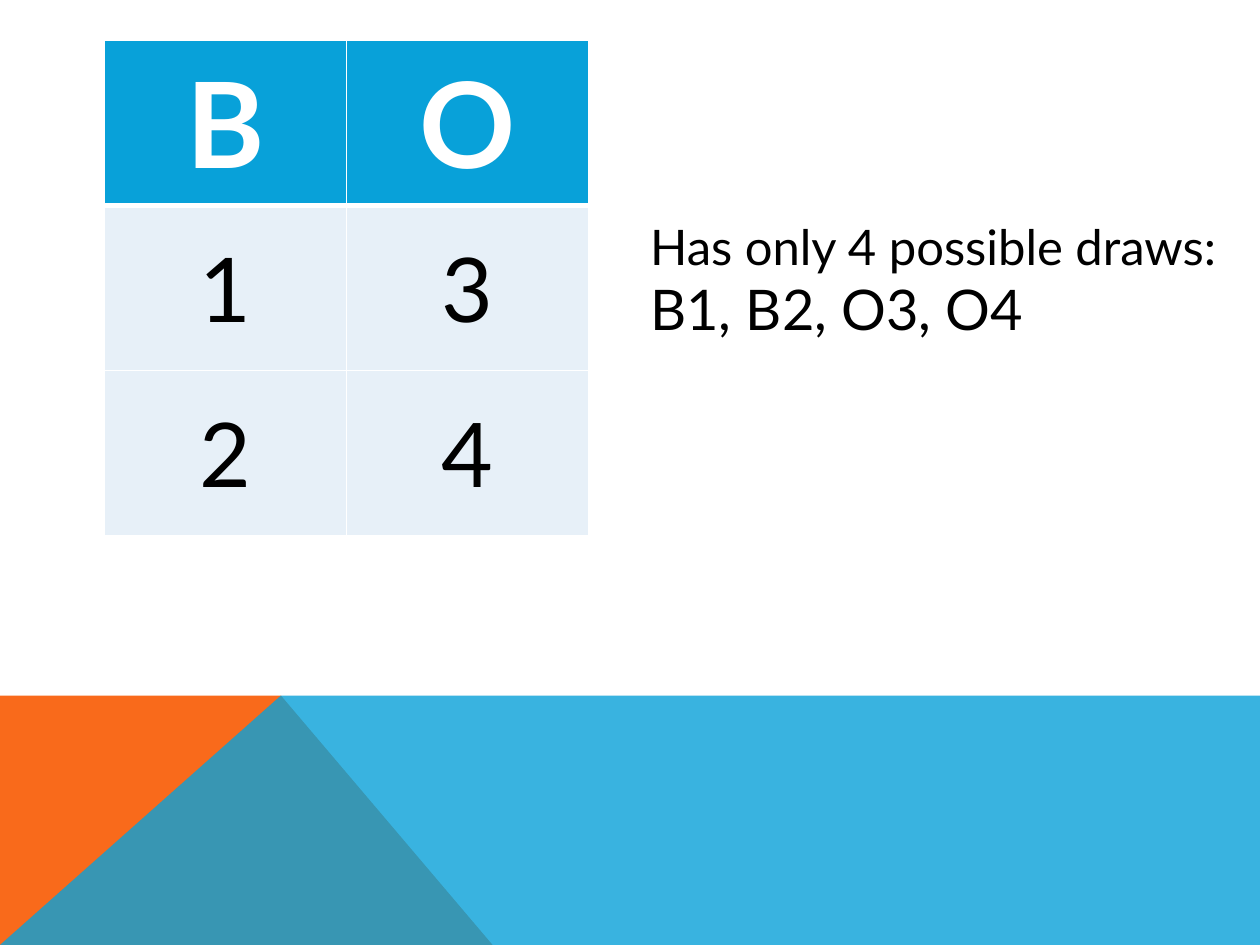
"""Build a slide with a small B/O number table and its possible draws."""
import lxml.etree
import pptx
import pptx.dml.color
import pptx.enum.text
import pptx.oxml.ns
import pptx.util

Inches, Pt = pptx.util.Inches, pptx.util.Pt
RGBColor = pptx.dml.color.RGBColor
qn = pptx.oxml.ns.qn
MIDDLE = pptx.enum.text.MSO_ANCHOR.MIDDLE

WHITE = RGBColor(0xFF, 0xFF, 0xFF)
BLACK = RGBColor(0, 0, 0)
BLUE = RGBColor(0x08, 0xA1, 0xD9)
ORANGE = RGBColor(0xF9, 0x6A, 0x1B)
PALE_BLUE = RGBColor(0xE7, 0xF0, 0xF8)
FONT = "Lato"
INSET = Inches(0.04)

CARD = [["B", "O"], ["1", "3"], ["2", "4"]]
DRAWS = [("Has only 4 possible draws:", 28), ("B1, B2, O3, O4", 32)]
BANDS = [
    ([(0, 7.5), (0, 5.52), (2.23, 5.52), (3.91, 7.5)], ORANGE, 100),
    ([(0, 7.5), (2.23, 5.52), (10, 5.52), (10, 7.5)], BLUE, 80),
]
CARD_LEFT, CARD_TOP, COLUMN_WIDTH, ROW_HEIGHT = 0.83, 0.32, 1.92, 1.31


def add_band(slide, points, color, opacity):
    builder = slide.shapes.build_freeform(
        Inches(points[0][0]), Inches(points[0][1]), scale=1.0)
    builder.add_line_segments([(Inches(x), Inches(y)) for x, y in points[1:]])
    band = builder.convert_to_shape()
    band.shadow.inherit = False
    band.line.fill.background()
    band.fill.solid()
    band.fill.fore_color.rgb = color
    if opacity < 100:
        tint = band.fill._xPr.find(qn("a:solidFill"))[0]
        lxml.etree.SubElement(tint, qn("a:alpha"), val=str(opacity * 1000))


def style_run(run, size, color, bold=False):
    run.font.name = FONT
    run.font.size = Pt(size)
    run.font.color.rgb = color
    run.font.bold = bold


def set_insets(frame):
    frame.margin_left = frame.margin_right = INSET
    frame.margin_top = frame.margin_bottom = INSET


def add_borders(cell, widths):
    properties = cell._tc.get_or_add_tcPr()
    for index, (side, width) in enumerate(widths.items()):
        border = lxml.etree.Element(qn(f"a:ln{side}"), w=str(Pt(width)))
        fill = lxml.etree.SubElement(border, qn("a:solidFill"))
        lxml.etree.SubElement(fill, qn("a:srgbClr"), val=str(WHITE))
        properties.insert(index, border)


def add_card(slide):
    rows, columns = len(CARD), len(CARD[0])
    card = slide.shapes.add_table(
        rows, columns, Inches(CARD_LEFT), Inches(CARD_TOP),
        Inches(columns * COLUMN_WIDTH), Inches(rows * ROW_HEIGHT)).table
    for column in card.columns:
        column.width = Inches(COLUMN_WIDTH)
    for r, values in enumerate(CARD):
        card.rows[r].height = Inches(ROW_HEIGHT)
        header = r == 0
        for c, value in enumerate(values):
            cell = card.cell(r, c)
            cell.text = value
            set_insets(cell)
            cell.vertical_anchor = MIDDLE
            cell.fill.solid()
            cell.fill.fore_color.rgb = BLUE if header else PALE_BLUE
            paragraph = cell.text_frame.paragraphs[0]
            paragraph.alignment = pptx.enum.text.PP_ALIGN.CENTER
            style_run(paragraph.runs[0], 68 if header else 51,
                      WHITE if header else BLACK, header)
            add_borders(cell, {"L": 1, "R": 1, "T": 3 if r == 1 else 1,
                               "B": 3 if header else 1})


def add_draws(slide):
    frame = slide.shapes.add_textbox(
        Inches(5.12), Inches(1.67), Inches(4.73), Inches(1.09)).text_frame
    frame.word_wrap = True
    frame.auto_size = pptx.enum.text.MSO_AUTO_SIZE.SHAPE_TO_FIT_TEXT
    frame.vertical_anchor = MIDDLE
    set_insets(frame)
    frame.text = "\n".join(line for line, size in DRAWS)
    for paragraph, (line, size) in zip(frame.paragraphs, DRAWS):
        style_run(paragraph.runs[0], size, BLACK)


def main():
    deck = pptx.Presentation()
    deck.slide_width, deck.slide_height = Inches(10), Inches(7.5)
    slide = deck.slides.add_slide(deck.slide_layouts[6])
    for points, color, opacity in BANDS:
        add_band(slide, points, color, opacity)
    add_card(slide)
    add_draws(slide)
    deck.save("out.pptx")


if __name__ == "__main__":
    main()
